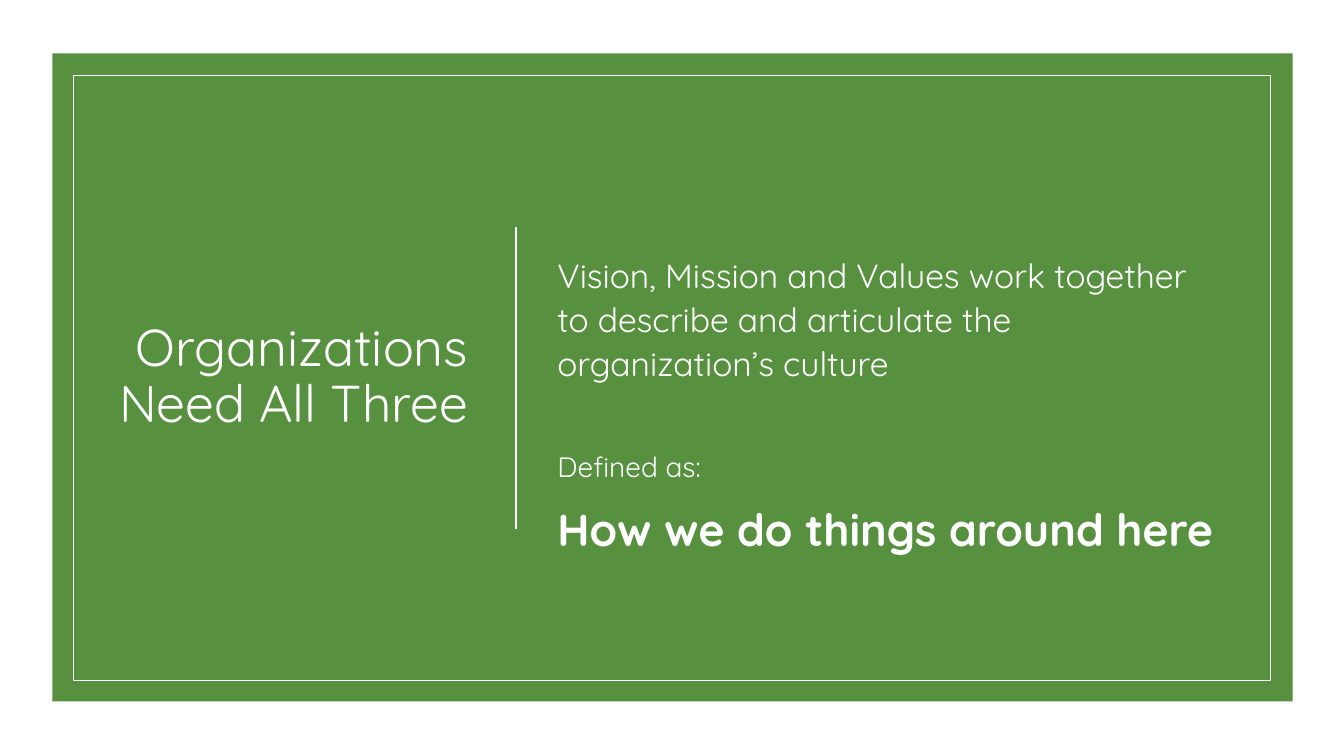
from dataclasses import dataclass

from lxml import etree
from pptx import Presentation
from pptx import util as u
from pptx.dml.color import RGBColor
from pptx.enum import shapes, text
from pptx.oxml import ns

WHITE = RGBColor(0xFF, 0xFF, 0xFF)
GREEN = RGBColor(0x57, 0x90, 0x3F)
FONT = "Quicksand"


@dataclass(frozen=True)
class Box:
    left: float
    top: float
    width: float
    height: float

    def lengths(self) -> list[u.Length]:
        return [u.Inches(n) for n in (self.left, self.top, self.width, self.height)]


@dataclass(frozen=True)
class Line:
    wording: str
    size: float
    space_before: float = 0
    bold: bool = False


def add_panel(slide, box: Box, fill: RGBColor | None = None, outline: float = 0) -> None:
    """Draw a rectangle with a fill, a white outline of the given points, or both."""
    shape = slide.shapes.add_shape(shapes.MSO_SHAPE.RECTANGLE, *box.lengths())
    shape.shadow.inherit = False
    if fill is None:
        shape.fill.background()
    else:
        shape.fill.solid()
        shape.fill.fore_color.rgb = fill
    if outline:
        shape.line.color.rgb = WHITE
        shape.line.width = u.Pt(outline)
    else:
        shape.line.fill.background()


def add_divider(slide, x: float, top: float, bottom: float) -> None:
    divider = slide.shapes.add_connector(
        shapes.MSO_CONNECTOR.STRAIGHT,
        u.Inches(x), u.Inches(top), u.Inches(x), u.Inches(bottom),
    )
    divider.line.color.rgb = WHITE
    divider.line.width = u.Pt(1.25)
    etree.SubElement(divider._element.spPr, ns.qn("a:effectLst"))


def add_text(slide, box: Box, lines: list[Line], *, align: text.PP_ALIGN,
             line_spacing: float, top_inset: float = 0.05) -> None:
    frame = slide.shapes.add_textbox(*box.lengths()).text_frame
    frame.word_wrap = True
    frame.vertical_anchor = text.MSO_ANCHOR.MIDDLE
    frame.margin_top = u.Inches(top_inset)
    for index, line in enumerate(lines):
        paragraph = frame.add_paragraph() if index else frame.paragraphs[0]
        paragraph.alignment = align
        paragraph.line_spacing = line_spacing
        paragraph.space_before = u.Pt(line.space_before)
        run = paragraph.add_run()
        run.text = line.wording
        run.font.name = FONT
        run.font.size = u.Pt(line.size)
        run.font.bold = line.bold
        run.font.color.rgb = WHITE


def main() -> None:
    presentation = Presentation()
    presentation.slide_width = u.Inches(13.33)
    presentation.slide_height = u.Inches(7.5)
    slide = presentation.slides.add_slide(presentation.slide_layouts[6])
    slide.background.fill.solid()
    slide.background.fill.fore_color.rgb = WHITE

    add_panel(slide, Box(0, 0, 13.33, 7.5), fill=WHITE)
    add_panel(slide, Box(0.52, 0.53, 12.3, 6.43), fill=GREEN)
    add_divider(slide, 5.12, 2.25, 5.25)
    add_panel(slide, Box(0.73, 0.75, 11.87, 6), outline=0.5)

    add_text(slide, Box(0.95, 1.09, 3.79, 5.31),
             [Line("Organizations Need All Three", 37)],
             align=text.PP_ALIGN.RIGHT, line_spacing=0.9)
    add_text(slide, Box(5.43, 1.09, 6.79, 5.31), [
        Line("Vision, Mission and Values work together to describe and "
             "articulate the organization’s culture", 24),
        Line("Defined as:", 20, space_before=45),
        Line("How we do things around here", 32, space_before=9, bold=True),
    ], align=text.PP_ALIGN.LEFT, line_spacing=1.1, top_inset=0.55)

    presentation.save("out.pptx")


if __name__ == "__main__":
    main()
